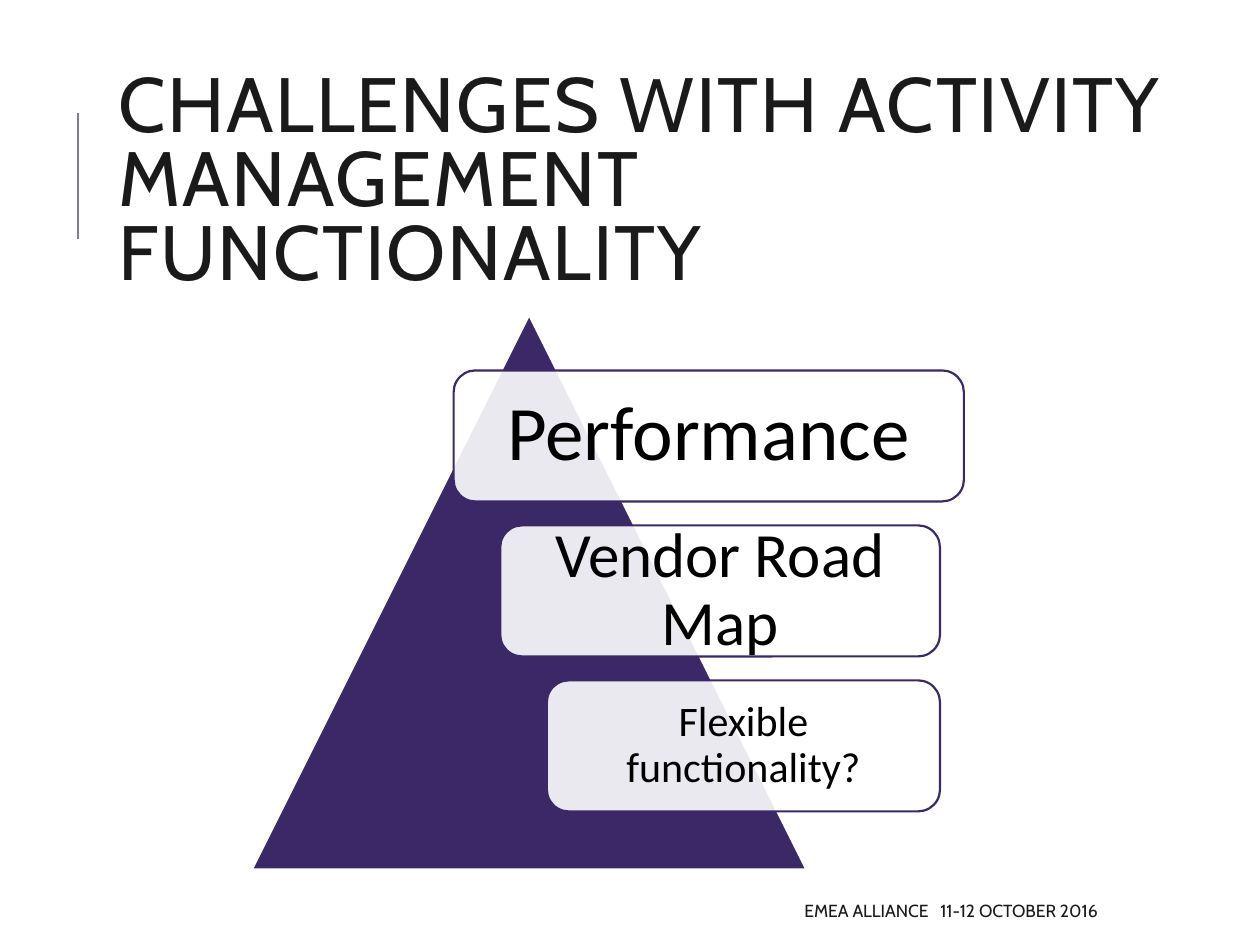
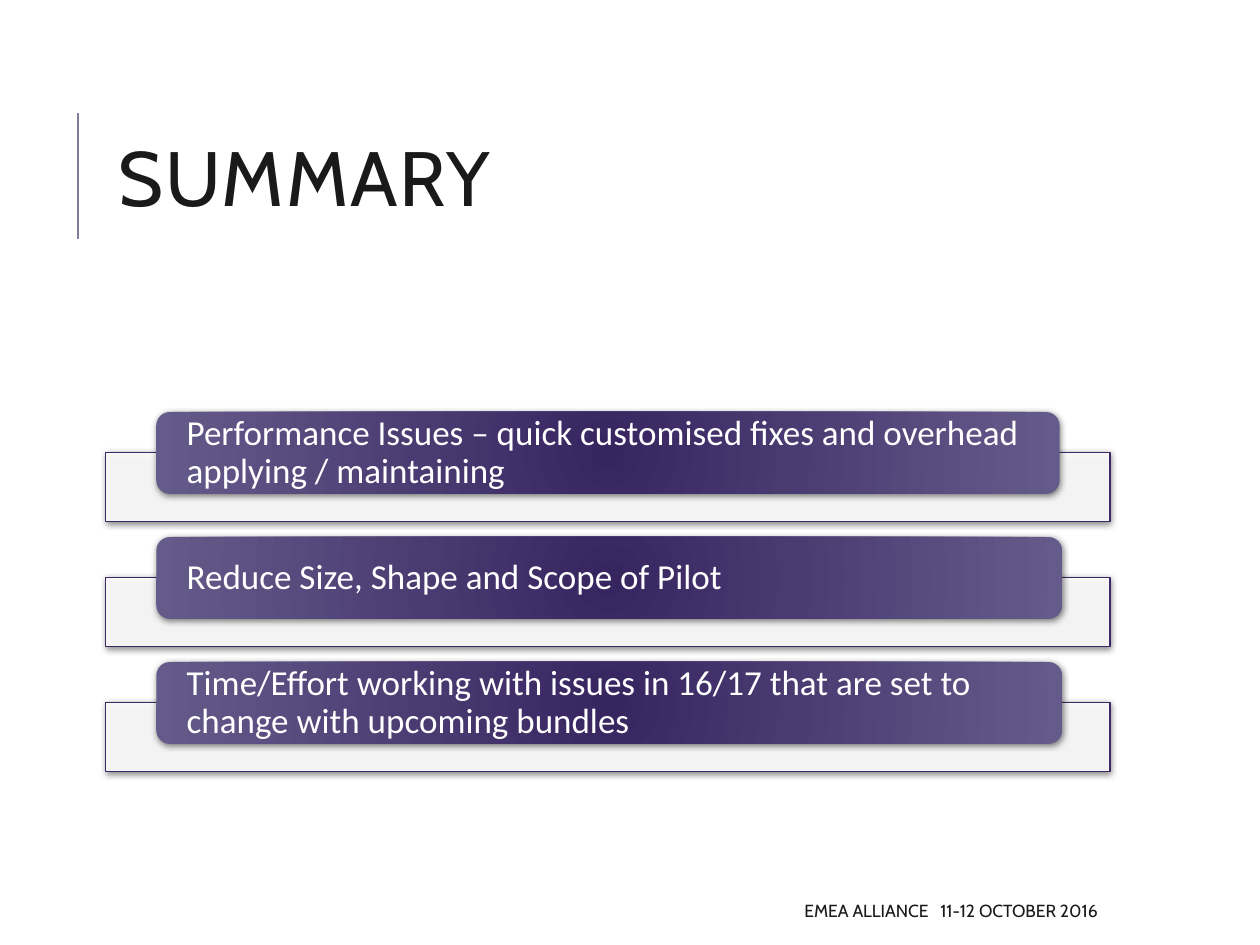
from lxml import etree
from pptx import Presentation
from pptx.dml.color import RGBColor
from pptx.enum.shapes import MSO_CONNECTOR, MSO_SHAPE
from pptx.enum.text import MSO_ANCHOR, MSO_AUTO_SIZE, PP_ALIGN
from pptx.oxml.ns import qn
from pptx.util import Emu, Inches, Pt

TRIANGLE, ROUNDED, RECTANGLE = MSO_SHAPE.ISOSCELES_TRIANGLE, MSO_SHAPE.ROUNDED_RECTANGLE, MSO_SHAPE.RECTANGLE
LEFT, CENTER, RIGHT = PP_ALIGN.LEFT, PP_ALIGN.CENTER, PP_ALIGN.RIGHT
MIDDLE = MSO_ANCHOR.MIDDLE
NO_AUTOFIT = MSO_AUTO_SIZE.NONE
STRAIGHT = MSO_CONNECTOR.STRAIGHT

COLORS = {name: RGBColor.from_string(value) for name, value in {
    "ink": "1A1A1A", "black": "000000", "white": "FFFFFF", "rule": "7F7B99",
    "purple": "3B2867", "bar_center": "372560", "bar_edge": "655B8A",
}.items()}
HEADING_FONT, BODY_FONT = "Cabin", "Calibri"

presentation = Presentation()
presentation.slide_width, presentation.slide_height = Inches(10), Inches(7.5)
COLUMN = presentation.slide_width / 100
ROW = presentation.slide_height / 100


def area(left, top, width, height):
    """Turn percentages of the slide's width and height into lengths."""
    return [Emu(round(share * unit)) for share, unit in
            zip((left, top, width, height), (COLUMN, ROW, COLUMN, ROW))]


def write(shape, runs, size, font, color, alignment, line_spacing=1.0, insets=(0.1, 0.05)):
    """Fill a shape with one paragraph of (text, letter spacing) runs."""
    frame = shape.text_frame
    frame.word_wrap = True
    frame.auto_size = NO_AUTOFIT
    frame.vertical_anchor = MIDDLE
    frame.margin_left = frame.margin_right = Inches(insets[0])
    frame.margin_top = frame.margin_bottom = Inches(insets[1])
    paragraph = frame.paragraphs[0]
    paragraph.alignment = alignment
    paragraph.line_spacing = line_spacing
    for text, letter_spacing in runs:
        run = paragraph.add_run()
        run.text = text
        run.font.size = Pt(size)
        run.font.name = font
        run.font.color.rgb = COLORS[color]
        if letter_spacing:
            run.font._element.set("spc", str(round(letter_spacing * 100)))


# Title, rule and footer of both slides
slides = []
for heading, title_width in (
    ("CHALLENGES WITH ACTIVITY MANAGEMENT FUNCTIONALITY", 87.8),
    ("SUMMARY", 79.7),
):
    slide = presentation.slides.add_slide(presentation.slide_layouts[5])
    slides.append(slide)
    title = slide.shapes.title
    title.left, title.top, title.width, title.height = area(8.4, 8.53, title_width, 21.87)
    write(title, [(heading, 1)], 44, HEADING_FONT, "ink", LEFT, 0.8)

    rule = slide.shapes.add_connector(STRAIGHT, *area(6.2, 25.33, 6.2, 12))
    rule.line.color.rgb = COLORS["rule"]
    rule.line.width = Pt(1.5)
    etree.SubElement(rule._element.spPr, qn("a:effectLst"))

    footer = slide.shapes.add_textbox(*area(39.7, 94.4, 48.4, 4))
    footer_runs = [("EMEA ALLIANCE", 0), (" ", 4.5), ("11-12 OCTOBER 2016", 0)]
    write(footer, footer_runs, 10, HEADING_FONT, "ink", RIGHT)

challenges, summary = slides
translucent, shadowed = [], []

# Pyramid of challenges
pyramid = challenges.shapes.add_shape(TRIANGLE, *area(20, 33.33, 44, 58.67))
pyramid.shadow.inherit = False
pyramid.fill.solid()
pyramid.fill.fore_color.rgb = COLORS["purple"]
pyramid.line.color.rgb = COLORS["white"]
pyramid.line.width = Pt(1.25)

for index, (challenge, width, size, inset) in enumerate((
    ("Performance", 40.5, 44, 0.18),
    ("Vendor Road Map", 34.9, 36, 0.15),
    ("Flexible functionality?", 31.2, 24, 0.1),
)):
    card = challenges.shapes.add_shape(
        ROUNDED, *area(36 + 3.7 * index, 39.2 + 16.4 * index, width, 13.87))
    card.line.width = Pt(1.25)
    write(card, [(challenge, 0)], size, BODY_FONT, "black", CENTER, 0.9, (inset, inset))
    card.shadow.inherit = False
    translucent.append(card)

# Summary bars, each in front of a tray
for index, (point, width) in enumerate((
    ("Performance Issues – quick customised fixes and overhead applying / maintaining", 71.7),
    ("Reduce Size, Shape and Scope of Pilot", 71.9),
    ("Time/Effort working with issues in 16/17 that are set to change with upcoming bundles", 71.9),
)):
    top = 43.6 + 13.23 * index
    tray = summary.shapes.add_shape(RECTANGLE, *area(8.4, top + 4.27, 79.7, 7.33))
    tray.line.width = Pt(0.75)
    translucent.append(tray)

    bar = summary.shapes.add_shape(ROUNDED, *area(12.4, top, width, 8.67))
    bar.line.fill.background()
    bar.fill.gradient()
    for stop, color in zip(bar.fill.gradient_stops, ("bar_center", "bar_edge")):
        stop.color.rgb = COLORS[color]
    gradient = bar._element.spPr.find(qn("a:gradFill"))
    gradient.remove(gradient.find(qn("a:lin")))
    circle = etree.SubElement(gradient, qn("a:path"), path="circle")
    etree.SubElement(circle, qn("a:fillToRect"), dict.fromkeys("ltrb", "100000"))
    write(bar, [(point, 0)], 20, BODY_FONT, "white", LEFT, 0.9, (0.21, 0))
    shadowed += [tray, bar]

for shape in translucent:
    shape.fill.solid()
    shape.fill.fore_color.rgb = COLORS["white"]
    shape.line.color.rgb = COLORS["purple"]
    white = shape._element.spPr.find(qn("a:solidFill"))[0]
    etree.SubElement(white, qn("a:alpha"), val="90000")

for shape in shadowed:
    shape.shadow.inherit = False
    effects = shape._element.spPr.find(qn("a:effectLst"))
    shadow = etree.SubElement(effects, qn("a:outerShdw"), blurRad=str(Pt(4)),
                              dist=str(Pt(1)), dir="5400000", rotWithShape="0")
    shadow_color = etree.SubElement(shadow, qn("a:srgbClr"), val=str(COLORS["black"]))
    etree.SubElement(shadow_color, qn("a:alpha"), val="50000")

presentation.save("out.pptx")
